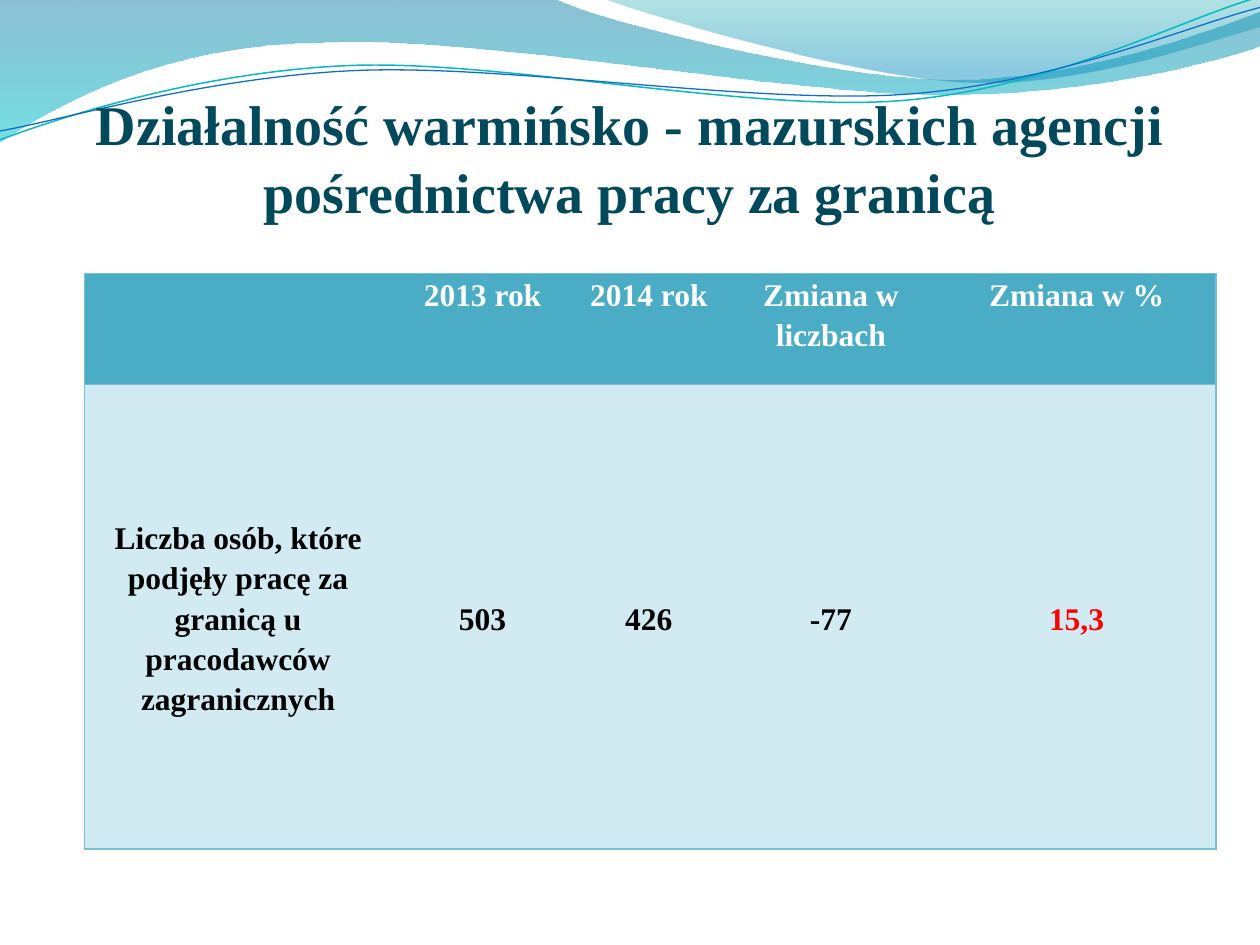
from collections import namedtuple
from dataclasses import dataclass
from math import cos, radians, sin

from lxml.etree import SubElement
from pptx import Presentation
from pptx.dml.color import RGBColor
from pptx.enum.text import MSO_ANCHOR as Anchor, PP_ALIGN as Align
from pptx.oxml import parse_xml
from pptx.oxml.ns import nsdecls, qn
from pptx.util import Inches, Pt

Box = namedtuple("Box", "left top width height")


@dataclass(frozen=True)
class Theme:
    """Colours, font and type sizes of the deck."""
    font: str = "Times New Roman"
    title_size: int = 32
    table_size: int = 18
    title: str = "03495C"
    header_text: str = "FFFFFF"
    body_text: str = "000000"
    alert_text: str = "FF0000"
    header_fill: str = "4BACC6"
    body_fill: str = "D2EAF1"
    border: str = "78C0D4"
    left_wave: tuple = ((0, "0074A1", 45), (1, "00C6CF", 55))
    right_wave: tuple = ((0, "00A1A9", 30), (0.8, "008BBF", 45))
    upper_line: str = "0AB8BF"
    lower_line: str = "0F6FC6"


THEME = Theme()
SWOOSH_TILT = -2.7

LEFT_WAVE = [
    (0, -0.01), (4.4, -0.01),
    (4.76, 0.17, 6.64, 0.63, 7.58, 0.63), (8.53, 0.63, 9.58, 0.26, 10, 0.09),
    (10.01, 0.36),
    (9.83, 0.44, 8.7, 0.76, 7.46, 0.75), (6.22, 0.75, 3.82, 0.28, 2.57, 0.34),
    (1.29, 0.35, 0.46, 0.83, -0.01, 1.13), (0, -0.01),
]
RIGHT_WAVE = [
    (4.79, -0.01),
    (5.09, 0.11, 6.82, 0.62, 7.69, 0.65), (8.56, 0.69, 9.61, 0.32, 10, 0.21),
    (10, 0), (4.79, -0.01),
]
UPPER_LINE = [
    (0, 1.11),
    (0.48, 0.93, 1.58, 0.57, 2.77, 0.52), (3.95, 0.47, 5.93, 0.89, 7.13, 0.8),
    (8.33, 0.71, 9.38, 0.15, 9.98, -0.02),
]
LOWER_LINE = [
    (0, 1.04),
    (0.47, 0.96, 1.64, 0.61, 2.83, 0.56), (4.03, 0.51, 5.97, 0.83, 7.17, 0.75),
    (8.36, 0.67, 9.41, 0.21, 10, 0.06),
]

TITLE = "Działalność warmińsko - mazurskich agencji pośrednictwa pracy za granicą"
ROWS = [
    ["", "2013 rok", "2014 rok", "Zmiana w liczbach", "Zmiana w %"],
    ["Liczba osób, które podjęły pracę za granicą u pracodawców zagranicznych",
     "503", "426", "-77", "15,3"],
]
COLUMN_WIDTHS = [2.44, 1.44, 1.2, 1.69, 2.21]
HEADER_HEIGHT = 0.88


def turn(point, center, degrees):
    """Turn a point clockwise around a center."""
    angle = radians(degrees)
    x, y = point[0] - center[0], point[1] - center[1]
    return (center[0] + x * cos(angle) - y * sin(angle),
            center[1] + x * sin(angle) + y * cos(angle))


def add_outline(page, box, segments, close, tilt=0, center=(0, 0)):
    """Draw lines and cubic curves measured from the corner of the box."""
    points = [turn(pair, center, -tilt) for segment in segments
              for pair in zip(segment[::2], segment[1::2])]
    start, *rest = [(Inches(box.left + x), Inches(box.top + y)) for x, y in points]
    builder = page.shapes.build_freeform(*start, scale=1.0)
    builder.add_line_segments(rest, close=close)
    shape = builder.convert_to_shape()
    shape.shadow.inherit = False
    shape.rotation = tilt
    outline = next(shape._element.spPr.iter(qn("a:path")))
    steps = iter(outline.findall(qn("a:lnTo")))
    for segment in segments[1:]:
        step = next(steps)
        if len(segment) == 6:
            step.tag = qn("a:cubicBezTo")
            for extra in (next(steps), next(steps)):
                step.append(extra[0])
                outline.remove(extra)
    return shape


def add_wave(page, box, segments, stops):
    """Draw a closed wave with a translucent vertical gradient."""
    wave = add_outline(page, box, segments, True)
    wave.line.fill.background()
    wave.fill.gradient()
    wave.fill.gradient_angle = 270
    for stop, (position, color, _) in zip(wave.fill.gradient_stops, stops):
        stop.position = position
        stop.color.rgb = RGBColor.from_string(color)
    for node, (_, _, opacity) in zip(wave._element.spPr.iter(qn("a:srgbClr")), stops):
        SubElement(node, qn("a:alpha")).set("val", str(opacity * 1000))


def add_swoosh(page, box, segments, center, color, width):
    """Draw an open curved line, tilted around its center."""
    swoosh = add_outline(page, box, segments, False, SWOOSH_TILT, center)
    swoosh.fill.background()
    swoosh.line.color.rgb = RGBColor.from_string(color)
    swoosh.line.width = Pt(width)


def add_banner(page, box):
    """Place the waves and lines across the top of the page."""
    add_wave(page, box, LEFT_WAVE, THEME.left_wave)
    add_wave(page, box, RIGHT_WAVE, THEME.right_wave)
    add_swoosh(page, box, UPPER_LINE, (4.99, 0.58), THEME.upper_line, 0.85)
    add_swoosh(page, box, LOWER_LINE, (5, 0.59), THEME.lower_line, 0.75)


def write(frame, text, size, color):
    """Write one centred bold paragraph and return it."""
    para = frame.paragraphs[0]
    para.alignment = Align.CENTER
    span = para.add_run()
    span.text = text
    span.font.name = THEME.font
    span.font.size = Pt(size)
    span.font.bold = True
    span.font.color.rgb = RGBColor.from_string(color)
    return para


def add_title(page, box):
    """Place the page title at the bottom of its box."""
    frame = page.shapes.add_textbox(*map(Inches, box)).text_frame
    frame.word_wrap = True
    frame.vertical_anchor = Anchor.BOTTOM
    frame.margin_left = frame.margin_right = frame.margin_bottom = 0
    frame.margin_top = Inches(0.05)
    write(frame, TITLE, THEME.title_size, THEME.title)


def set_borders(cell, sides):
    """Rule the named sides of a cell and clear the others."""
    properties = cell._tc.get_or_add_tcPr()
    for index, side in enumerate("LRTB"):
        fill = (f'<a:solidFill><a:srgbClr val="{THEME.border}"/></a:solidFill>'
                if side in sides else "<a:noFill/>")
        properties.insert(index, parse_xml(
            f'<a:ln{side} {nsdecls("a")} w="{Pt(1)}">{fill}</a:ln{side}>'))


def add_change_table(page, box):
    """Place the table comparing the two years."""
    last = len(COLUMN_WIDTHS) - 1
    table = page.shapes.add_table(len(ROWS), last + 1, *map(Inches, box)).table
    table.first_row = table.horz_banding = False
    for column, width in zip(table.columns, COLUMN_WIDTHS):
        column.width = Inches(width)
    for row, height in zip(table.rows, (HEADER_HEIGHT, box.height - HEADER_HEIGHT)):
        row.height = Inches(height)
    for row, texts in enumerate(ROWS):
        for column, text in enumerate(texts):
            cell = table.cell(row, column)
            cell.margin_left = cell.margin_right = Inches(0.07)
            cell.margin_top = cell.margin_bottom = 0
            cell.vertical_anchor = Anchor.MIDDLE if row else Anchor.TOP
            cell.fill.solid()
            cell.fill.fore_color.rgb = RGBColor.from_string(
                THEME.body_fill if row else THEME.header_fill)
            set_borders(cell, "TB" + {0: "L", last: "R"}.get(column, ""))
            color = THEME.header_text
            if row:
                color = THEME.alert_text if column == last else THEME.body_text
            if text:
                para = write(cell.text_frame, text, THEME.table_size, color)
                para.line_spacing = 1.15


def main():
    """Build the deck and save it."""
    deck = Presentation()
    deck.slide_width, deck.slide_height = Inches(10), Inches(7.5)
    page = deck.slides.add_slide(deck.slide_layouts[6])
    add_banner(page, Box(0, 0, 10, 1.13))
    add_title(page, Box(0.35, 0.36, 9.3, 1.42))
    add_change_table(page, Box(0.67, 2.17, sum(COLUMN_WIDTHS), 4.57))
    deck.save("out.pptx")


if __name__ == "__main__":
    main()
